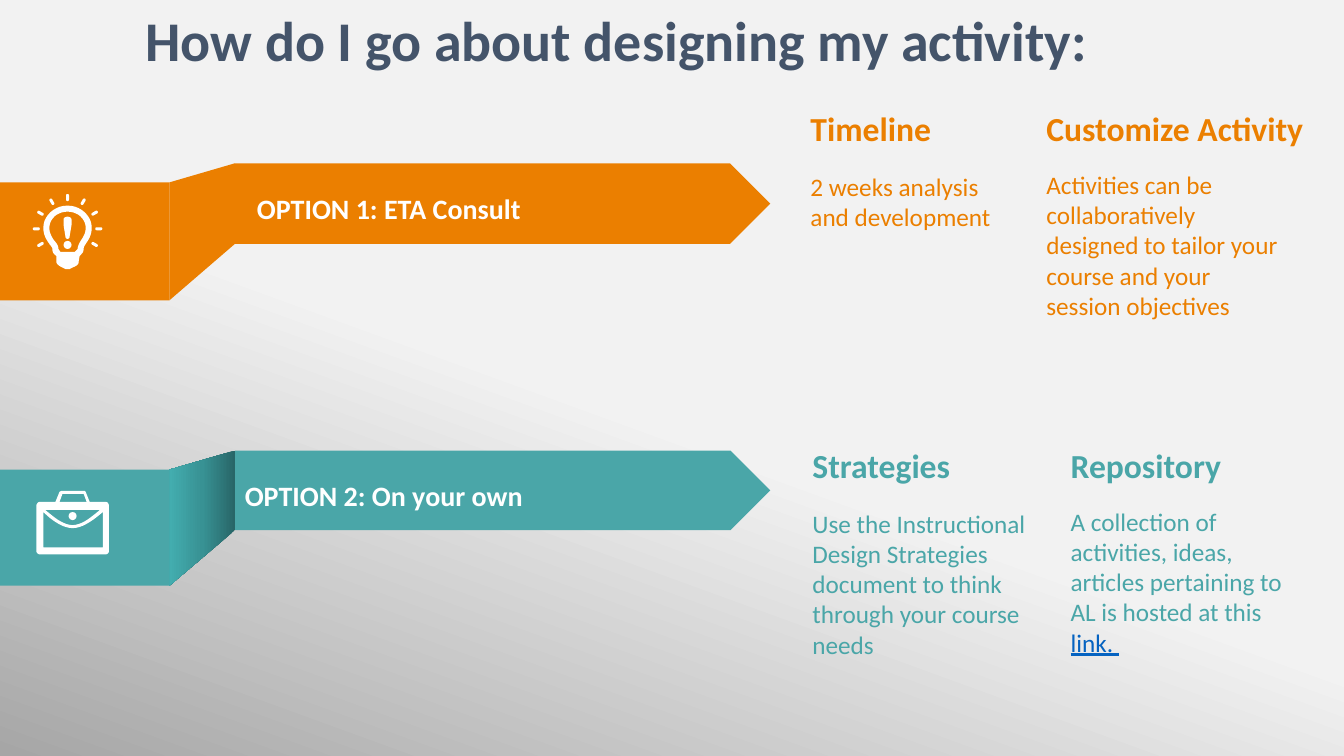
import copy
from pptx import Presentation
from pptx.dml.color import RGBColor
from pptx.enum import shapes, text
from pptx.oxml.ns import qn
from pptx.util import Inches, Pt
import math

COLORS = {"orange": "EB7F00", "teal": "4AA6A8", "white": "FFFFFF",
          "title": "44546A", "link": "0563C1"}
BACKDROP = [(0, "A6A6A6"), (0.46, "F2F2F2"), (1, "F2F2F2")]
FOLD_SHADE = [(0, "286668"), (0.5, "389294"), (1, "43ADAF")]

TITLE = "How do I go about designing my activity:"
# color, left, heading top, heading width, heading, body top, body width, body, link
COLUMNS = [
    ("orange", 7.94, 1.02, 1.75, "Timeline", 1.65, 2.26,
     "2 weeks analysis and development", ""),
    ("orange", 10.28, 1.02, 2.8, "Customize Activity", 1.63, 2.6,
     "Activities can be collaboratively designed to tailor your course and "
     "your session objectives", ""),
    ("teal", 7.96, 4.36, 1.8, "Strategies", 4.99, 2.32,
     "Use the Instructional Design Strategies document to think through "
     "your course needs", ""),
    ("teal", 10.52, 4.36, 1.83, "Repository", 4.97, 2.36,
     "A collection of activities, ideas, articles pertaining to AL is hosted "
     "at this ", "link. "),
]
# color, top, arrow height, tab height, label, label left, label top, fold shade
BANDS = [
    ("teal", 4.47, 0.79, 1.15, "OPTION 2: On your own", 2.33, 4.7, FOLD_SHADE),
    ("orange", 1.62, 0.8, 1.17, "OPTION 1: ETA Consult", 2.45, 1.85, None),
]
TAB_W, FOLD_W, ARROW_W, TAB_DROP = 1.68, 0.65, 5.31, 0.19

# Outlines: two numbers are a line end, six are a curve (two handles and an end)
CASE = [
    [(1.05, 4.98), (0.89, 4.98), (0.85, 4.88), (0.84, 4.87), (0.61, 4.87),
     (0.59, 4.88), (0.55, 4.98), (0.39, 4.98), (0.38, 4.98, 0.36, 5, 0.36, 5.02),
     (0.36, 5.47), (0.36, 5.48, 0.38, 5.5, 0.39, 5.5), (1.05, 5.5),
     (1.07, 5.5, 1.08, 5.48, 1.08, 5.47), (1.08, 5.02),
     (1.08, 5, 1.07, 4.98, 1.05, 4.98)],
    [(0.99, 5.06), (0.93, 5.11, 0.82, 5.21, 0.72, 5.21),
     (0.62, 5.21, 0.51, 5.11, 0.45, 5.06)],
    [(0.62, 4.9), (0.83, 4.9), (0.86, 4.98), (0.59, 4.98)],
    [(0.43, 5.43), (0.43, 5.08), (0.49, 5.14, 0.61, 5.24, 0.72, 5.24),
     (0.83, 5.24, 0.95, 5.14, 1.02, 5.08), (1.02, 5.43)],
]
BULB = [
    [(0.67, 2.04), (0.54, 2.04, 0.43, 2.14, 0.43, 2.26),
     (0.43, 2.34, 0.47, 2.39, 0.49, 2.42), (0.5, 2.44, 0.52, 2.45, 0.52, 2.47),
     (0.52, 2.5, 0.53, 2.52, 0.56, 2.54), (0.56, 2.6),
     (0.56, 2.61, 0.57, 2.63, 0.61, 2.65), (0.65, 2.67), (0.69, 2.67),
     (0.73, 2.65), (0.78, 2.63, 0.78, 2.61, 0.78, 2.6), (0.79, 2.54),
     (0.81, 2.52, 0.83, 2.5, 0.83, 2.47), (0.83, 2.45, 0.84, 2.44, 0.85, 2.42),
     (0.87, 2.39, 0.91, 2.34, 0.91, 2.26), (0.91, 2.14, 0.8, 2.04, 0.67, 2.04)],
    [(0.8, 2.39), (0.79, 2.41, 0.77, 2.44, 0.77, 2.47), (0.74, 2.5), (0.6, 2.5),
     (0.58, 2.47), (0.58, 2.44, 0.56, 2.41, 0.54, 2.39),
     (0.52, 2.36, 0.49, 2.32, 0.49, 2.26), (0.49, 2.17, 0.57, 2.1, 0.67, 2.1),
     (0.77, 2.1, 0.85, 2.17, 0.85, 2.26), (0.85, 2.32, 0.82, 2.36, 0.8, 2.39)],
]
MARK = [[(0.65, 2.35), (0.65, 2.36, 0.66, 2.37, 0.67, 2.37),
         (0.68, 2.37, 0.69, 2.36, 0.69, 2.35), (0.71, 2.23), (0.71, 2.18),
         (0.71, 2.16, 0.69, 2.15, 0.67, 2.15),
         (0.65, 2.15, 0.63, 2.16, 0.63, 2.18), (0.63, 2.23)]]
DOTS = [(0.68, 5.08, 0.08, 0.08), (0.63, 2.39, 0.08, 0.08)]
RAY_CENTER, RAY_RADIUS, RAY_W, RAY_H = (0.67, 2.27), 0.31, 0.03, 0.07


def rgb(name):
    return RGBColor.from_string(COLORS.get(name, name))


def set_gradient(element, fill, stops, angle):
    fill.gradient()
    fill.gradient_angle = angle
    gs_list = element.find(".//" + qn("a:gsLst"))
    while len(gs_list) < len(stops):
        gs_list.append(copy.deepcopy(gs_list[-1]))
    for stop, (position, color) in zip(fill.gradient_stops, stops):
        stop.position = position
        stop.color.rgb = rgb(color)


def paint(sp, color):
    sp.shadow.inherit = False
    sp.fill.solid()
    sp.fill.fore_color.rgb = rgb(color)
    sp.line.fill.background()
    return sp


def add_preset(kind, box, color):
    return paint(s.shapes.add_shape(kind, *map(Inches, box)), color)


def flatten(outline, steps=10):
    """Turn an outline with curves into a list of points."""
    points = [outline[0]]
    for part in outline[1:]:
        if len(part) == 2:
            points.append(part)
            continue
        start, (a, b, c) = points[-1], (part[:2], part[2:4], part[4:])
        for t in (i / steps for i in range(1, steps + 1)):
            u = 1 - t
            points.append(tuple(u**3 * p0 + 3 * u * u * t * p1 + 3 * u * t * t * p2 + t**3 * p3
                                for p0, p1, p2, p3 in zip(start, a, b, c)))
    return [(x * 1000, y * 1000) for x, y in points]


def add_outline(outlines, color):
    paths = [flatten(outline) for outline in outlines]
    builder = s.shapes.build_freeform(*paths[0][0], scale=Inches(1) / 1000)
    for i, points in enumerate(paths):
        if i:
            builder.move_to(*points[0])
        builder.add_line_segments(points[1:], close=True)
    return paint(builder.convert_to_shape(), color)


def write(tf, runs, size, bold=False, align=text.PP_ALIGN.LEFT):
    """Fill a text frame with one paragraph of (text, color) runs."""
    tf.word_wrap = True
    tf.auto_size = text.MSO_AUTO_SIZE.NONE
    tf.vertical_anchor = text.MSO_ANCHOR.TOP
    p = tf.paragraphs[0]
    p.alignment = align
    p.font.name, p.font.size, p.font.bold = "Calibri", Pt(size), bold
    for words, color in runs:
        r = p.add_run()
        r.text = words
        r.font.color.rgb = rgb(color)
        if color == "link":
            r.font.underline = True


def add_text(box, runs, size, bold=False):
    write(s.shapes.add_textbox(*map(Inches, box)).text_frame, runs, size, bold)


prs = Presentation()
prs.slide_width, prs.slide_height = Inches(13.33), Inches(7.5)
s = prs.slides.add_slide(prs.slide_layouts[5])
set_gradient(s.element, s.background.fill, BACKDROP, 70)

title = s.shapes.title
title.left, title.top, title.width, title.height = map(Inches, (0.58, 0, 10.3, 1.02))
write(title.text_frame, [(TITLE, "title")], 40, True, text.PP_ALIGN.RIGHT)

for color, left, head_y, head_w, head, body_y, body_w, body, link in COLUMNS:
    add_text((left, head_y, head_w, 0.58), [(head, color)], 24, True)
    runs = [(body, color)] + ([(link, "link")] if link else [])
    add_text((left, body_y, body_w, 1.37), runs, 18)

for color, top, arrow_h, tab_h, label, label_x, label_y, shade in BANDS:
    arrow_x, tab_y = TAB_W + FOLD_W, top + TAB_DROP
    add_preset(shapes.MSO_SHAPE.PENTAGON, (arrow_x, top, ARROW_W, arrow_h), color)
    fold = add_outline([[(TAB_W, tab_y + tab_h), (TAB_W, tab_y),
                         (arrow_x, top), (arrow_x, top + arrow_h)]], color)
    if shade:
        set_gradient(fold.element, fold.fill, shade, 180)
    add_preset(shapes.MSO_SHAPE.RECTANGLE, (0, tab_y, TAB_W, tab_h), color)
    add_text((label_x, label_y, 4.47, 0.44), [(label, "white")], 20, True)

for icon in (CASE, BULB, MARK):
    add_outline(icon, "white")
for dot in DOTS:
    add_preset(shapes.MSO_SHAPE.OVAL, dot, "white")
for angle in range(-120, 121, 30):
    x = RAY_CENTER[0] + RAY_RADIUS * math.sin(math.radians(angle))
    y = RAY_CENTER[1] - RAY_RADIUS * math.cos(math.radians(angle))
    ray = add_preset(shapes.MSO_SHAPE.ROUNDED_RECTANGLE,
                     (x - RAY_W / 2, y - RAY_H / 2, RAY_W, RAY_H), "white")
    ray.adjustments[0] = 0.5
    ray.rotation = angle

prs.save("out.pptx")
